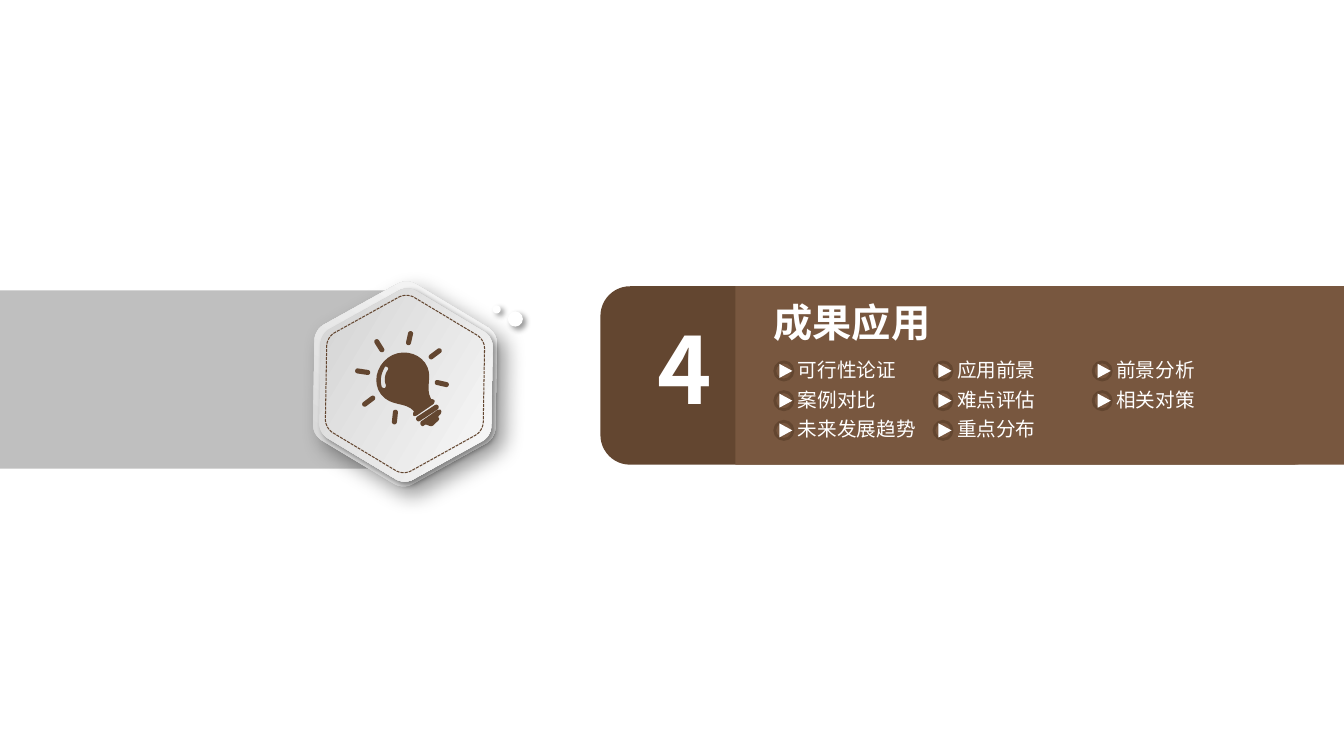
"""Build a section slide with a light-bulb badge and a banner of topics."""
import math
from dataclasses import dataclass
from typing import Optional

import pptx
import pptx.dml.color
import pptx.enum.dml
import pptx.enum.shapes
import pptx.enum.text
import pptx.oxml
import pptx.oxml.ns
import pptx.util

COLS, ROWS = 1334, 750
CELL = pptx.util.Inches(0.01)
FONT = "Noto Sans CJK SC"
COLORS = {"white": "FFFFFF", "grey": "BFBFBF", "dark": "634630", "brown": "78573F",
          "shade": "D3D3D3", "light": "F9F9F9", "shadow": "000000"}
KIND = pptx.enum.shapes.MSO_SHAPE
ALIGN = pptx.enum.text.PP_ALIGN


@dataclass
class Shadow:
    blur: int
    dist: int


@dataclass
class Block:
    kind: int
    x: float
    y: float
    w: float
    h: float
    fill: str
    line: Optional[str] = None
    shadow: Optional[Shadow] = None
    turn: int = 0


@dataclass
class Hexagon:
    cx: int
    cy: int
    radius: float
    gradient: Optional[int] = None
    shadow: Optional[Shadow] = None


@dataclass
class Label:
    text: str
    x: float
    y: float
    w: float
    h: float
    size: int
    bold: bool = False
    align: int = ALIGN.LEFT
    inset: tuple = (0, 0)


SMALL_SHADOW = Shadow(4, 3)
BLOCKS = [
    Block(KIND.OVAL, 489, 303, 8, 8, "white", shadow=SMALL_SHADOW),
    Block(KIND.OVAL, 504, 309, 15, 15, "white", shadow=SMALL_SHADOW),
    Block(KIND.ROUNDED_RECTANGLE, 596, 284, 717, 177, "dark"),
    Block(KIND.RECTANGLE, 730, 284, COLS - 730, 177, "brown"),
]
HEXAGONS = [
    Hexagon(402, 381, 104.5, 59, Shadow(15, 9)),
    Hexagon(403, 382, 98.5, 329, SMALL_SHADOW),
    Hexagon(402, 381, 90.5),
]
HEADINGS = [
    Label("4", 643, 305, 39, 121, 66, True, ALIGN.CENTER, (10, 5)),
    Label("成果应用", 761, 292, 299, 55, 28, True, inset=(7, 4)),
]
TOPICS = [
    ["可行性论证", "应用前景", "前景分析"],
    ["案例对比", "难点评估", "相关对策"],
    ["未来发展趋势", "重点分布"],
]
BARS = [
    (374, 339, 379, 347), (355, 368, 365, 369.5), (362, 401, 370, 395),
    (391.5, 418.5, 392.5, 409), (434, 379.5, 443, 381.5), (436, 348, 428, 354),
    (407.5, 331, 405.5, 340), (433, 404, 415.5, 415.5),
]
GLASS = [
    (431, 397), (432, 398, 431, 400, 430, 401), (414, 412),
    (412, 413, 411, 413, 410, 412), (410, 411, 410, 409, 411, 408),
    (402, 398, 388, 404, 378, 391), (370, 380, 373, 364, 385, 355),
    (397, 346, 414, 349, 422, 360), (431, 373, 421, 384, 428, 396),
    (429, 396, 430, 396, 431, 397),
]
GLINT = [
    (384, 364), (383, 363, 382, 364, 382, 364), (378, 371, 377, 378, 379, 384),
    (380, 385, 381, 385, 382, 385), (383, 384, 383, 383, 383, 382),
    (381, 377, 382, 371, 385, 367), (386, 366, 385, 364, 384, 364),
]
SOCKET = [
    (434, 407), (418, 418), (417, 419, 417, 421, 418, 422),
    (419, 423, 420, 423, 421, 422), (422, 421, 423, 421, 425, 422),
    (427, 423, 429, 423, 430, 422), (433, 419), (435, 418, 436, 416, 436, 415),
    (435, 414), (435, 413, 436, 412, 437, 411), (438, 410, 438, 409, 438, 408),
    (438, 406, 436, 406, 434, 407),
]


def rgb(name: str) -> pptx.dml.color.RGBColor:
    return pptx.dml.color.RGBColor.from_string(COLORS[name])


def emu(*cells: float) -> list[int]:
    return [round(c * CELL) for c in cells]


def flatten(outline: list[tuple], steps: int = 8) -> list[tuple]:
    points = [outline[0]]
    for seg in outline[1:]:
        if len(seg) == 2:
            points.append(seg)
            continue
        curve = (points[-1], seg[:2], seg[2:4], seg[4:])
        for t in (i / steps for i in range(1, steps + 1)):
            weights = ((1 - t) ** 3, 3 * t * (1 - t) ** 2, 3 * t * t * (1 - t), t ** 3)
            points.append(tuple(sum(k * q[axis] for k, q in zip(weights, curve))
                                for axis in (0, 1)))
    return points


def capsule(x1: float, y1: float, x2: float, y2: float, radius: float = 2.5) -> list[tuple]:
    heading = math.atan2(y2 - y1, x2 - x1)
    arcs = [(x2, y2, heading - math.pi / 2), (x1, y1, heading + math.pi / 2)]
    return [(x + radius * math.cos(start + i * math.pi / 8),
             y + radius * math.sin(start + i * math.pi / 8))
            for x, y, start in arcs for i in range(9)]


def rounded_hexagon(h: Hexagon, cut: float = 0.1, pull: float = 0.6) -> list[tuple]:
    angles = [math.radians(60 * i - 89) for i in range(6)]
    corners = [(h.cx + h.radius * math.cos(a), h.cy + h.radius * math.sin(a)) for a in angles]

    def toward(a: tuple, b: tuple, share: float) -> tuple:
        return tuple(p + (q - p) * share for p, q in zip(a, b))

    outline = []
    for i, corner in enumerate(corners):
        before, after = corners[i - 1], corners[(i + 1) % 6]
        near = cut * (1 - pull)
        outline += [toward(corner, before, cut),
                    toward(corner, before, near) + toward(corner, after, near)
                    + toward(corner, after, cut)]
    return flatten(outline)


def finish(sp, shadow: Optional[Shadow] = None) -> None:
    sp.shadow.inherit = False
    if shadow:
        effects = sp._element.spPr.find(pptx.oxml.ns.qn("a:effectLst"))
        effects.append(pptx.oxml.parse_xml(
            f'<a:outerShdw {pptx.oxml.ns.nsdecls("a")} blurRad="{shadow.blur * 12700}" '
            f'dist="{shadow.dist * 12700}" dir="2700000" algn="tl" rotWithShape="0">'
            f'<a:srgbClr val="{COLORS["shadow"]}"><a:alpha val="40000"/></a:srgbClr>'
            '</a:outerShdw>'))


def draw_outlines(s, outlines: list[list[tuple]]):
    builder = s.shapes.build_freeform(*emu(*outlines[0][0]))
    for i, points in enumerate(outlines):
        if i:
            builder.move_to(*emu(*points[0]))
        builder.add_line_segments([tuple(emu(*p)) for p in points[1:]], close=True)
    return builder.convert_to_shape()


def draw_hexagon(s, h: Hexagon) -> None:
    sp = draw_outlines(s, [rounded_hexagon(h)])
    finish(sp, h.shadow)
    if h.gradient is None:
        sp.fill.background()
        sp.line.color.rgb = rgb("dark")
        sp.line.width = pptx.util.Pt(0.75)
        sp.line.dash_style = pptx.enum.dml.MSO_LINE.SQUARE_DOT
        return
    sp.line.fill.background()
    sp.fill.gradient()
    sp.fill.gradient_angle = h.gradient
    for stop, name in zip(sp.fill.gradient_stops, ("shade", "light")):
        stop.color.rgb = rgb(name)


def draw_bulb(s) -> None:
    sp = draw_outlines(s, [flatten(o) for o in (GLASS, GLINT, SOCKET)]
                       + [capsule(*bar) for bar in BARS])
    finish(sp)
    sp.fill.solid()
    sp.fill.fore_color.rgb = rgb("dark")
    sp.line.fill.background()


def draw_block(s, b: Block) -> None:
    sp = s.shapes.add_shape(b.kind, *emu(b.x, b.y, b.w, b.h))
    finish(sp, b.shadow)
    sp.rotation = b.turn
    sp.fill.solid()
    sp.fill.fore_color.rgb = rgb(b.fill)
    if b.line:
        sp.line.color.rgb = rgb(b.line)
        sp.line.width = pptx.util.Pt(2)
    else:
        sp.line.fill.background()


def draw_label(s, label: Label) -> None:
    tf = s.shapes.add_textbox(*emu(label.x, label.y, label.w, label.h)).text_frame
    tf.word_wrap = True
    tf.auto_size = pptx.enum.text.MSO_AUTO_SIZE.SHAPE_TO_FIT_TEXT
    tf.margin_left = tf.margin_right = emu(label.inset[0])[0]
    tf.margin_top = tf.margin_bottom = emu(label.inset[1])[0]
    p = tf.paragraphs[0]
    p.text, p.alignment = label.text, label.align
    p.font.size, p.font.bold = pptx.util.Pt(label.size), label.bold
    p.font.color.rgb, p.font.name = rgb("white"), FONT
    p._p.pPr.find(pptx.oxml.ns.qn("a:defRPr")).append(pptx.oxml.parse_xml(
        f'<a:ea {pptx.oxml.ns.nsdecls("a")} typeface="{FONT}"/>'))


def draw_topic(s, text: str, col: int, row: int) -> None:
    x, y = 769 + 158 * col, 359 + 29.5 * row
    draw_label(s, Label(text, x + 23, y - 4, 165 if col == 2 else 134, 24, 14))
    draw_block(s, Block(KIND.OVAL, x, y, 18, 18, "brown", line="dark"))
    draw_block(s, Block(KIND.ISOSCELES_TRIANGLE, x + 4, y + 2.5, 14, 13, "white", turn=90))


def main() -> None:
    prs = pptx.Presentation()
    prs.slide_width, prs.slide_height = emu(COLS, ROWS)
    s = prs.slides.add_slide(prs.slide_layouts[6])
    draw_block(s, Block(KIND.RECTANGLE, 0, 288, 407, 177, "grey"))
    for h in HEXAGONS:
        draw_hexagon(s, h)
    for b in BLOCKS:
        draw_block(s, b)
    for label in HEADINGS:
        draw_label(s, label)
    for row, texts in enumerate(TOPICS):
        for col, text in enumerate(texts):
            draw_topic(s, text, col, row)
    draw_bulb(s)
    prs.save("out.pptx")


if __name__ == "__main__":
    main()
